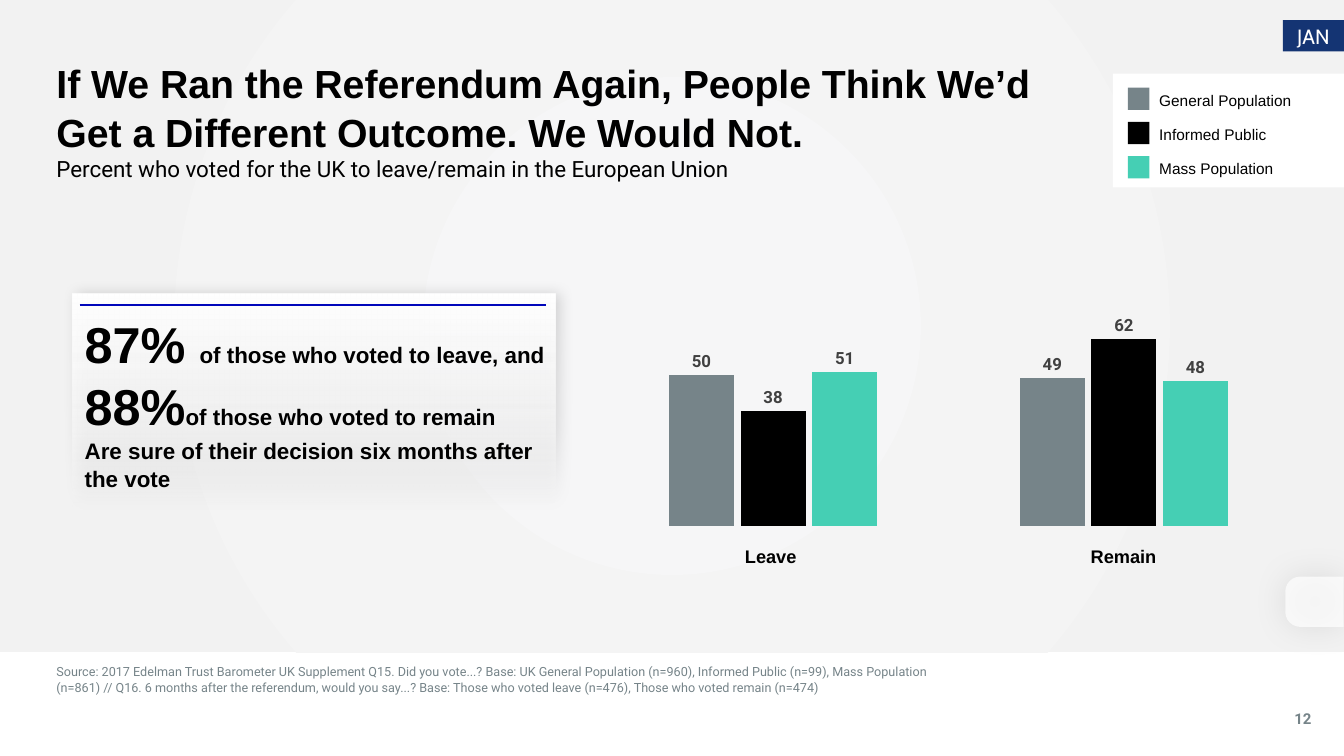
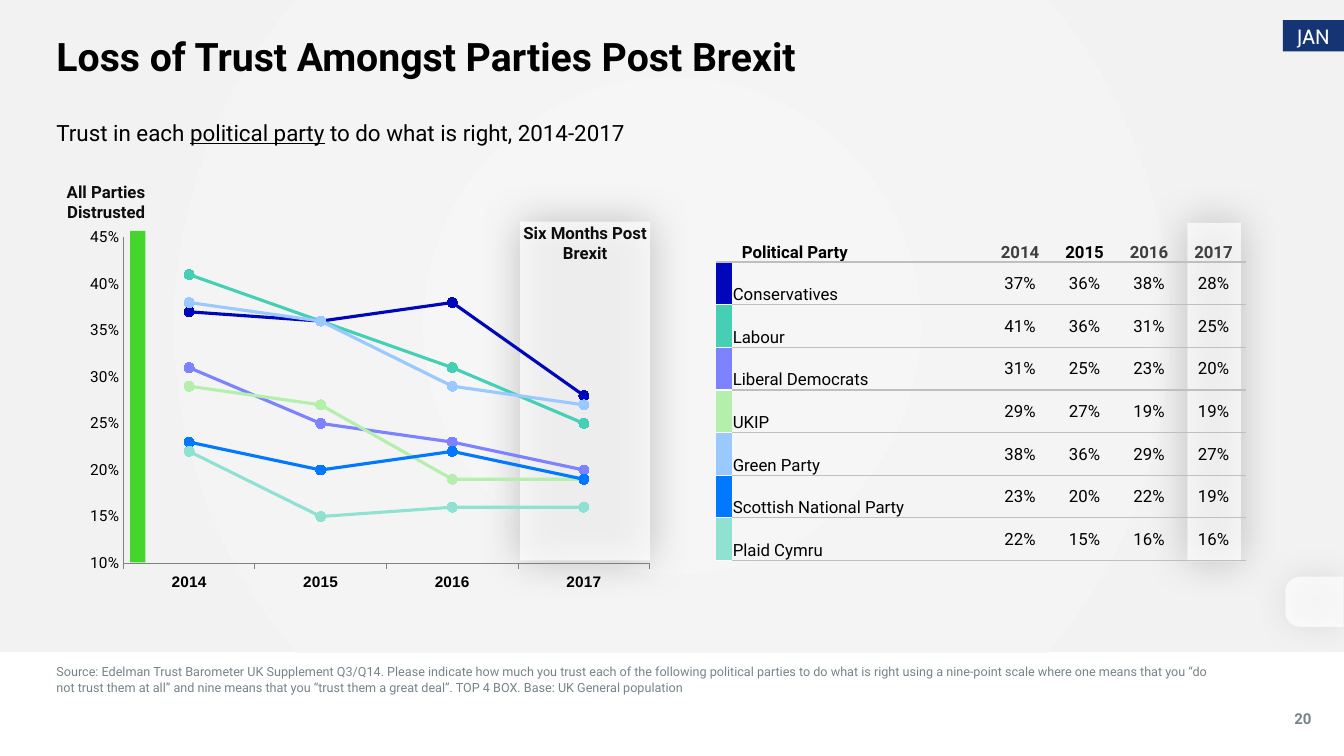
from lxml.etree import SubElement
from pptx import Presentation
from pptx.chart.data import CategoryChartData
from pptx.dml.color import RGBColor
from pptx.enum.chart import XL_CHART_TYPE as ChartKind, XL_LABEL_POSITION as LabelSpot
from pptx.enum.chart import XL_MARKER_STYLE as Marker, XL_TICK_MARK as Tick
from pptx.enum.shapes import MSO_CONNECTOR as Connector, MSO_SHAPE as Preset
from pptx.enum.text import MSO_ANCHOR as Anchor, MSO_AUTO_SIZE as AutoSize, PP_ALIGN as Align
from pptx.oxml import parse_xml
from pptx.oxml.ns import nsdecls, qn
from pptx.util import Inches, Pt

WIDTH, HEIGHT = Inches(13.333), Inches(7.5)
MARGIN = 4.2
BLACK, WHITE, GREY, RULE = "000000", "FFFFFF", "768489", "BFBFBF"
INK, LABEL, NAVY, BLUE, TEAL, GREEN = "0D0D0D", "404040", "143473", "0006BA", "45CFB4", "44D62C"
SANS, HEADING = "Roboto", "Arial"
NO_GRID_STYLE = "{2D5ABB26-0587-4C30-8999-92F81FD0307C}"
RADIAL = '<a:path path="circle"><a:fillToRect l="50000" t="50000" r="50000" b="50000"/></a:path>'
DOWNWARD = '<a:lin ang="5400000" scaled="0"/>'

POPULATIONS = [
    ("General Population", GREY, (50, 49)),
    ("Informed Public", BLACK, (38, 62)),
    ("Mass Population", TEAL, (51, 48)),
]
YEARS = ("2014", "2015", "2016", "2017")
PARTIES = [
    ("Conservatives", BLUE, (37, 36, 38, 28)),
    ("Labour", TEAL, (41, 36, 31, 25)),
    ("Liberal Democrats", "7D82FF", (31, 25, 23, 20)),
    ("UKIP", "B4EFAB", (29, 27, 19, 19)),
    ("Green Party", "99C9FF", (38, 36, 29, 27)),
    ("Scottish National Party", "0078FF", (23, 20, 22, 19)),
    ("Plaid Cymru", "8FE2D2", (22, 15, 16, 16)),
]


def rgb(code):
    """Turn a hex string into a colour."""
    return RGBColor.from_string(code)


def across(share):
    """Length of a percentage of the slide width."""
    return round(WIDTH * share / 100)


def down(share):
    """Length of a percentage of the slide height."""
    return round(HEIGHT * share / 100)


def area(left, top, width, height):
    """Box given in percentages of the slide."""
    return across(left), down(top), across(width), down(height)


def apply(target, values):
    """Set every attribute named in a dict."""
    for key, value in values.items():
        setattr(target, key, value)


def style_font(font, size, name=SANS, color=BLACK, bold=False, **extra):
    """Format a font."""
    apply(font, {"size": Pt(size), "name": name, "bold": bold, **extra})
    font.color.rgb = rgb(color)


def write(frame, paragraphs, look, spacing=None, anchor=Anchor.TOP, inset=0, wrap=True):
    """Fill a text frame with paragraphs made of (text, look changes) runs."""
    apply(frame, {"auto_size": AutoSize.NONE, "word_wrap": wrap, "vertical_anchor": anchor})
    apply(frame, {f"margin_{side}": Inches(inset) for side in ("left", "right", "top", "bottom")})
    for index, runs in enumerate(paragraphs):
        paragraph = frame.add_paragraph() if index else frame.paragraphs[0]
        apply(paragraph, {"alignment": Align.LEFT, **(spacing or {})})
        for text, changes in runs:
            run = paragraph.add_run()
            run.text = text
            style_font(run.font, **{**look, **changes})


def add_label(slide, box, text, look, align=Align.LEFT, **layout):
    """Add a one-paragraph text box."""
    frame = slide.shapes.add_textbox(*area(*box)).text_frame
    write(frame, [[(text, {})]], look, {"alignment": align}, **layout)


def fill_placeholder(holder, box, runs, look, **spacing):
    """Move a title or body placeholder and write it without a bullet."""
    apply(holder, dict(zip(("left", "top", "width", "height"), area(*box))))
    properties = holder.text_frame.paragraphs[0]._p.get_or_add_pPr()
    properties.set("marL", "0")
    properties.set("indent", "0")
    SubElement(properties, qn("a:buNone"))
    write(holder.text_frame, [runs], look, {"space_before": Pt(0), **spacing})


def add_block(slide, box, color=None, preset=Preset.RECTANGLE, opacity=100):
    """Add an outline-free shape, optionally filled."""
    shape = slide.shapes.add_shape(preset, *area(*box))
    shape.shadow.inherit = False
    shape.line.fill.background()
    if color:
        shape.fill.solid()
        shape.fill.fore_color.rgb = rgb(color)
        tone = shape._element.spPr.find(qn("a:solidFill"))[0]
        if opacity < 100:
            SubElement(tone, qn("a:alpha"), val=str(opacity * 1000))
    return shape


def add_gradient(shape, stops, direction):
    """Fill a shape with (position, colour, opacity) stops."""
    marks = "".join(
        f'<a:gs pos="{spot * 1000}"><a:srgbClr val="{color}">'
        f'<a:alpha val="{opacity * 1000}"/></a:srgbClr></a:gs>'
        for spot, color, opacity in stops)
    shape._element.spPr.insert(2, parse_xml(
        f'<a:gradFill {nsdecls("a")} rotWithShape="1"><a:gsLst>{marks}</a:gsLst>{direction}</a:gradFill>'))


def cast_shadow(shape, opacity, blur, distance=0):
    """Give a shape a soft black shadow."""
    effects = shape._element.spPr.find(qn("a:effectLst"))
    shadow = SubElement(effects, qn("a:outerShdw"), blurRad=str(Pt(blur)),
                        dist=str(Pt(distance)), dir="0", algn="ctr", rotWithShape="0")
    tone = SubElement(shadow, qn("a:srgbClr"), val=BLACK)
    SubElement(tone, qn("a:alpha"), val=str(opacity * 1000))


def add_panel(slide, box):
    """Add a translucent highlight panel."""
    cast_shadow(add_block(slide, box, WHITE, opacity=72), 30, 30)


def add_band(deck, layout):
    """Put the shaded band behind every slide of the layout."""
    band = add_block(deck.slides[0], (0, 0, 100, 86.27))
    add_gradient(band, [(0, "F6F6F7", 100), (100, "F2F2F2", 100)], RADIAL)
    layout.shapes._spTree.insert(2, band._element)


def add_frame(slide, source, source_width, page):
    """Add the month tag, side tab, source and page number."""
    tag = add_block(slide, (95.45, 2.67, 4.55, 4.13), NAVY)
    write(tag.text_frame, [[("JAN", {})]], {"size": 14.7, "name": "Cabin", "color": WHITE},
          {"alignment": Align.CENTER}, Anchor.MIDDLE)
    tab = add_block(slide, (95.93, 75.73, 3.75, 7.73), WHITE, Preset.ROUND_2_SAME_RECTANGLE, 72)
    tab.rotation = 90
    tab.adjustments[0] = 0.3
    tab._element.spPr.xfrm.set("flipV", "1")
    cast_shadow(tab, 12, 25)
    add_label(slide, (MARGIN, 87.87, source_width, 5.5), source, {"size": 9, "color": GREY})
    add_label(slide, (95.63, 93.87, 2.62, 5), page,
              {"size": 10.7, "color": GREY, "bold": True}, Align.CENTER)


def add_plot(slide, kind, box, categories, series, inner, size):
    """Add a chart with a fixed inner plot area and return it."""
    data = CategoryChartData()
    data.categories = categories
    for name, _, values in series:
        data.add_series(name, values)
    chart = slide.shapes.add_chart(kind, *area(*box), data).chart
    apply(chart, {"has_legend": False, "has_title": False})
    style_font(chart.font, size)
    chart.value_axis.has_major_gridlines = False
    chart.plots[0].vary_by_categories = False
    plot_area = chart._chartSpace.chart.plotArea
    for old in plot_area.findall(qn("c:layout")):
        plot_area.remove(old)
    places = "".join(f'<c:{key} val="{value}"/>' for key, value in zip("xywh", inner))
    plot_area.insert(0, parse_xml(
        f'<c:layout {nsdecls("c")}><c:manualLayout><c:layoutTarget val="inner"/>'
        f'<c:xMode val="edge"/><c:yMode val="edge"/>{places}</c:manualLayout></c:layout>'))
    return chart


def add_vote_chart(slide):
    """Add the leave and remain columns."""
    chart = add_plot(slide, ChartKind.COLUMN_CLUSTERED, (42.3, 28.53, 54.38, 42.27), ("1", "2"),
                     POPULATIONS, (0.04, 0.03, 0.96, 0.94), 10)
    apply(chart.value_axis, {"minimum_scale": 0, "maximum_scale": 100, "visible": False})
    chart.category_axis.visible = False
    apply(chart.plots[0], {"gap_width": 219, "overlap": -10})
    for series, (_, color, _) in zip(chart.plots[0].series, POPULATIONS):
        series.format.fill.solid()
        series.format.fill.fore_color.rgb = rgb(color)
        apply(series.data_labels, {"show_value": True, "position": LabelSpot.OUTSIDE_END})
        style_font(series.data_labels.font, 12, color=LABEL, bold=True)


def add_trust_chart(slide):
    """Add the trust lines of the parties."""
    shares = [(name, color, [value / 100 for value in values]) for name, color, values in PARTIES]
    chart = add_plot(slide, ChartKind.LINE_MARKERS, (6.68, 29.47, 41.7, 48.67), YEARS,
                     shares, (0.06, 0.04, 0.94, 0.89), 11)
    apply(chart.value_axis, {"minimum_scale": 0.1, "maximum_scale": 0.45, "major_unit": 0.05,
                             "major_tick_mark": Tick.NONE})
    apply(chart.value_axis.tick_labels, {"number_format": "0%", "number_format_is_linked": False})
    chart.category_axis.major_tick_mark = Tick.OUTSIDE
    style_font(chart.category_axis.tick_labels.font, 11, HEADING, bold=True)
    for axis in (chart.value_axis, chart.category_axis):
        axis.format.line.color.rgb = rgb("808080")
    for series, (_, color, _) in zip(chart.plots[0].series, PARTIES):
        series.smooth = False
        series.format.line.width = Pt(2.25)
        series.format.line.color.rgb = rgb(color)
        apply(series.marker, {"style": Marker.CIRCLE, "size": 7})
        series.marker.format.fill.solid()
        series.marker.format.fill.fore_color.rgb = rgb(color)
        series.marker.format.line.color.rgb = rgb(color)


def style_cell(cell, text, look, align, anchor, left=0.01, fill=None, edges=(RULE, RULE)):
    """Write one table cell with its fill and its top and bottom edges."""
    write(cell.text_frame, [[(text, {})]] if text else [], look, {"alignment": align})
    apply(cell, {"margin_left": Inches(left), "margin_right": Inches(0.01), "margin_top": Inches(0.01),
                 "margin_bottom": 0, "vertical_anchor": anchor})
    properties = cell._tc.get_or_add_tcPr()
    for edge, color in zip(("lnT", "lnB"), edges):
        if color:
            line = SubElement(properties, qn(f"a:{edge}"), w=str(Pt(1)))
            SubElement(SubElement(line, qn("a:solidFill")), qn("a:srgbClr"), val=color)
    if fill:
        cell.fill.solid()
        cell.fill.fore_color.rgb = rgb(fill)
    else:
        cell.fill.background()


def add_trust_table(slide):
    """Add the table of parties and years."""
    widths, heights = [1.2, 19.05] + [4.8] * 4, [6.27] + [5.64] * len(PARTIES)
    box = area(53.25, 28.4, sum(widths), sum(heights))
    table = slide.shapes.add_table(len(heights), len(widths), *box).table
    apply(table, {"first_row": False, "horz_banding": False})
    table._tbl.tblPr.find(qn("a:tableStyleId")).text = NO_GRID_STYLE
    for column, share in zip(table.columns, widths):
        column.width = across(share)
    for row, share in zip(table.rows, heights):
        row.height = down(share)
    plain, header = {"size": 12}, (None, RULE)
    style_cell(table.cell(0, 0), "", plain, Align.LEFT, Anchor.BOTTOM, edges=header)
    style_cell(table.cell(0, 1), "Political Party", {"size": 12, "bold": True},
               Align.LEFT, Anchor.BOTTOM, left=0.1, edges=header)
    for column, year in enumerate(YEARS, 2):
        look = {"size": 12, "bold": True, "color": BLACK if year == "2015" else "3F3F3F"}
        style_cell(table.cell(0, column), year, look, Align.CENTER, Anchor.BOTTOM, edges=header)
    for row, (party, color, values) in enumerate(PARTIES, 1):
        style_cell(table.cell(row, 0), "", plain, Align.LEFT, Anchor.BOTTOM, fill=color,
                   edges=(RULE if row == 1 else WHITE, WHITE))
        style_cell(table.cell(row, 1), party, plain, Align.LEFT, Anchor.BOTTOM)
        for column, value in enumerate(values, 2):
            style_cell(table.cell(row, column), f"{value}%", plain, Align.CENTER, Anchor.MIDDLE)


def add_legend(slide):
    """Add the legend of the three populations."""
    add_block(slide, (82.8, 9.73, 17.2, 15.07), WHITE)
    for index, (name, color, _) in enumerate(POPULATIONS):
        offset = index * 4.53
        add_block(slide, (83.93, 11.6 + offset, 1.6, 2.93), color)
        add_label(slide, (86.25, 12 + offset, 13.65, 2.4), name, {"size": 11, "name": HEADING})


def add_callout(slide):
    """Add the card about how sure voters are."""
    card = add_block(slide, (5.4, 38.8, 35.93, 28.4))
    add_gradient(card, [(0, WHITE, 100), (63, "F7F7F7", 74), (100, "F7F7F7", 0)], DOWNWARD)
    cast_shadow(card, 14, 10, 3)
    big = {"size": 36}
    write(slide.shapes.add_textbox(*area(5.93, 40.4, 36.38, 24.67)).text_frame, [
        [("87% ", big), ("of those who voted to leave, and", {})],
        [("88%", big), ("of those who voted to remain", {})],
        [("Are sure of their decision six months after the vote", {})],
    ], {"size": 16, "name": HEADING, "bold": True}, {"line_spacing": 1.04}, inset=0.05)
    rule = slide.shapes.add_connector(Connector.STRAIGHT, across(5.93), down(40.4), across(40.65), down(40.4))
    rule.line.color.rgb = rgb(BLUE)
    rule.line.width = Pt(1.5)
    SubElement(rule._element.spPr, qn("a:effectLst"))


def build_referendum(slide):
    """Build the slide on the referendum."""
    title, subtitle = slide.placeholders
    fill_placeholder(title, (MARGIN, 7.6, 74.78, 6.8), [(
        "If We Ran the Referendum Again, People Think We’d Get a Different Outcome. We Would Not.", {})],
        {"size": 28, "name": HEADING, "bold": True}, line_spacing=1.04)
    fill_placeholder(subtitle, (MARGIN, 20.53, 69.08, 7.73), [(
        "Percent who voted for the UK to leave/remain in the European Union", {})],
        {"size": 16}, space_after=Pt(12))
    add_vote_chart(slide)
    for left, answer in ((52.73, "Leave"), (78.98, "Remain")):
        add_label(slide, (left, 72.13, 9.23, 7.47), answer,
                  {"size": 13, "name": HEADING, "bold": True}, Align.CENTER, wrap=False)
    add_legend(slide)
    add_callout(slide)
    add_frame(slide, "Source: 2017 Edelman Trust Barometer UK Supplement Q15. Did you vote...? Base: UK General Population (n=960), Informed Public (n=99), Mass Population (n=861) // Q16. 6 months after the referendum, would you say...? Base: Those who voted leave (n=476), Those who voted remain (n=474)", 69.08, "12")


def build_trust(slide):
    """Build the slide on trust in parties."""
    title, subtitle = slide.placeholders
    fill_placeholder(title, (MARGIN, 5.47, 75.53, 6.8), [("Loss of Trust Amongst Parties Post Brexit", {})],
                     {"size": 28, "bold": True}, line_spacing=0.8)
    fill_placeholder(subtitle, (MARGIN, 15.73, 91.58, 7.73), [
        ("Trust in each ", {}), ("political party", {"underline": True}),
        (" to do what is right, 2014-2017", {})], {"size": 16}, space_after=Pt(12))
    add_panel(slide, (88.35, 29.47, 3.98, 44.8))
    add_panel(slide, (38.7, 29.33, 9.68, 44.8))
    add_trust_table(slide)
    add_trust_chart(slide)
    add_block(slide, (9.68, 30.53, 1.13, 43.87), GREEN)
    note = {"size": 12, "color": INK, "bold": True}
    add_label(slide, (4.13, 24.13, 6.68, 5.2), "All Parties Distrusted", note, Align.RIGHT, anchor=Anchor.MIDDLE)
    add_label(slide, (38.7, 29.47, 9.68, 5.73), "Six Months Post Brexit", note, Align.CENTER)
    add_frame(slide, "Source: Edelman Trust Barometer UK Supplement Q3/Q14. Please indicate how much you trust each of the following political parties to do what is right using a nine-point scale where one means that you “do not trust them at all” and nine means that you “trust them a great deal”. TOP 4 BOX. Base: UK General population", 85.65, "20")


def main():
    """Build and save the deck."""
    deck = Presentation()
    apply(deck, {"slide_width": WIDTH, "slide_height": HEIGHT})
    layout = deck.slide_layouts[1]
    for build in (build_referendum, build_trust):
        build(deck.slides.add_slide(layout))
    add_band(deck, layout)
    deck.save("out.pptx")


if __name__ == "__main__":
    main()
